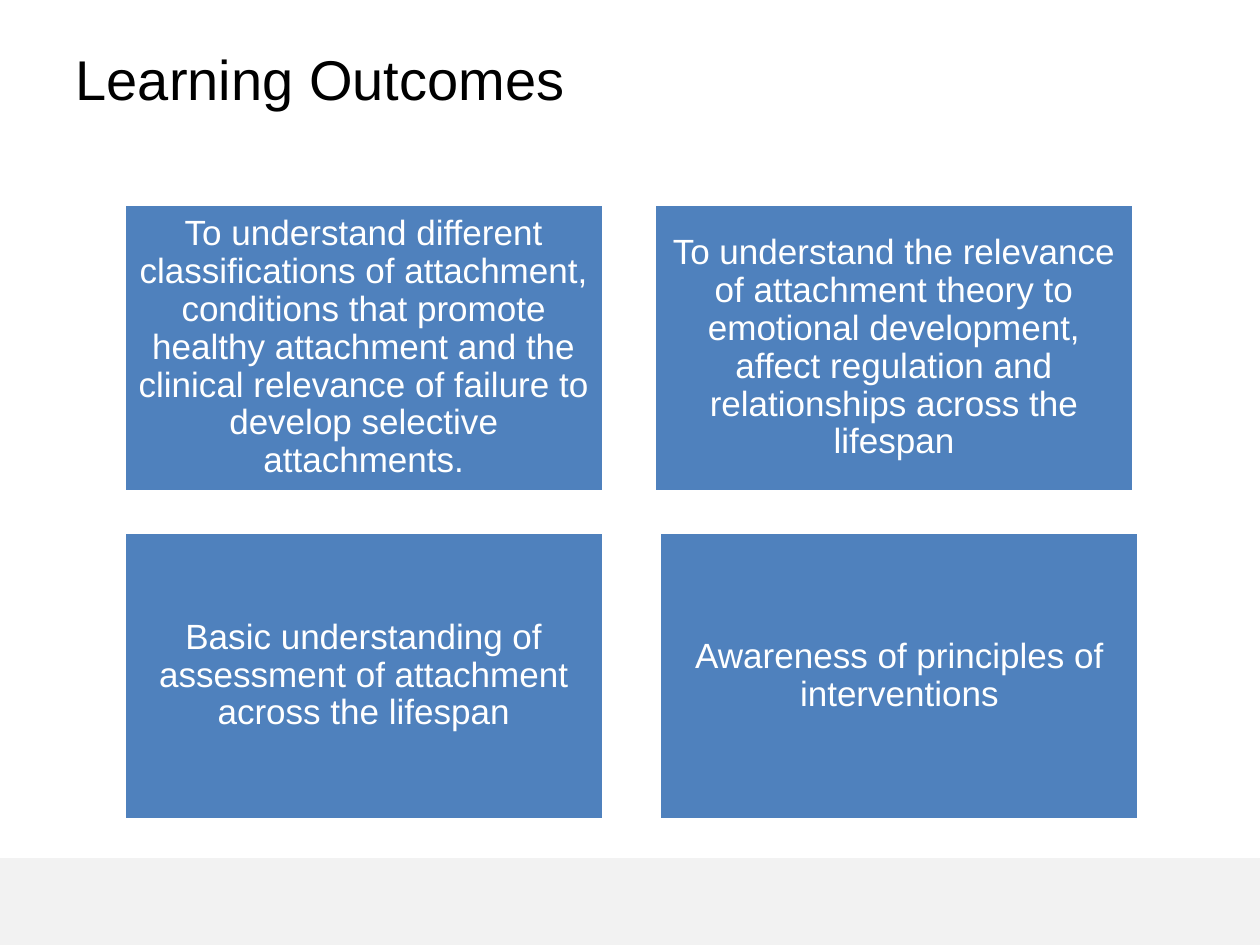
from dataclasses import dataclass

from pptx import Presentation
from pptx.dml.color import RGBColor
from pptx.enum.shapes import MSO_SHAPE
from pptx.enum.text import MSO_ANCHOR, MSO_AUTO_SIZE, PP_ALIGN
from pptx.util import Pt

RECT = MSO_SHAPE.RECTANGLE
TOP, MIDDLE = MSO_ANCHOR.TOP, MSO_ANCHOR.MIDDLE
LEFT, CENTER = PP_ALIGN.LEFT, PP_ALIGN.CENTER
NO_FIT = MSO_AUTO_SIZE.NONE


@dataclass(frozen=True)
class Theme:
    font: str = "Arial"
    ink: str = "000000"
    paper: str = "FFFFFF"
    card: str = "4F81BD"
    band: str = "F2F2F2"
    head: int = 32
    body: int = 20


class Deck:
    """Holds the theme and the current slide."""

    def __init__(self, theme, slide):
        self.theme = theme
        self.slide = slide

    def label(self, frame, text, size, color, align):
        """Fill the first paragraph of a frame and return it."""
        para = frame.paragraphs[0]
        para.alignment = align
        run = para.add_run()
        run.text = text
        run.font.name = self.theme.font
        run.font.size = Pt(size)
        run.font.color.rgb = RGBColor.from_string(color)
        return para

    def title(self, text, x, y, w, h):
        shape = self.slide.shapes.title
        shape.left, shape.top, shape.width, shape.height = map(Pt, (x, y, w, h))
        frame = shape.text_frame
        frame.vertical_anchor = TOP
        frame.auto_size = NO_FIT
        self.label(frame, text, self.theme.head, self.theme.ink, LEFT)

    def rect(self, x, y, w, h, color):
        shape = self.slide.shapes.add_shape(RECT, *map(Pt, (x, y, w, h)))
        shape.shadow.inherit = False
        shape.fill.solid()
        shape.fill.fore_color.rgb = RGBColor.from_string(color)
        shape.line.fill.background()
        return shape

    def card(self, text, x, y, w, h):
        theme = self.theme
        shape = self.rect(x, y, w, h, theme.card)
        shape.line.color.rgb = RGBColor.from_string(theme.paper)
        shape.line.width = Pt(2)
        frame = shape.text_frame
        frame.word_wrap = True
        frame.vertical_anchor = MIDDLE
        frame.margin_left = frame.margin_right = Pt(6)
        frame.margin_top = frame.margin_bottom = Pt(6)
        para = self.label(frame, text, theme.body, theme.paper, CENTER)
        para.line_spacing = 0.9


def main():
    prs = Presentation()
    prs.slide_width, prs.slide_height = Pt(720), Pt(540)
    theme = Theme()
    deck = Deck(theme, prs.slides.add_slide(prs.slide_layouts[5]))

    deck.rect(0, 490.3, 720, 49.7, theme.band)
    deck.title("Learning Outcomes", 36, 21.6, 648, 90)

    # Each row: top, left of the second card, the two texts
    rows = [
        (116.7, 373.9,
         "To understand different classifications of attachment, conditions "
         "that promote healthy attachment and the clinical relevance of "
         "failure to develop selective attachments.",
         "To understand the relevance of attachment theory to emotional "
         "development, affect regulation and relationships across the lifespan"),
        (304, 377,
         "Basic understanding of assessment of attachment across the lifespan",
         "Awareness of principles of interventions"),
    ]
    for top, right, first, second in rows:
        for x, text in ((70.9, first), (right, second)):
            deck.card(text, x, top, 274, 164.4)

    prs.save("out.pptx")


if __name__ == "__main__":
    main()
